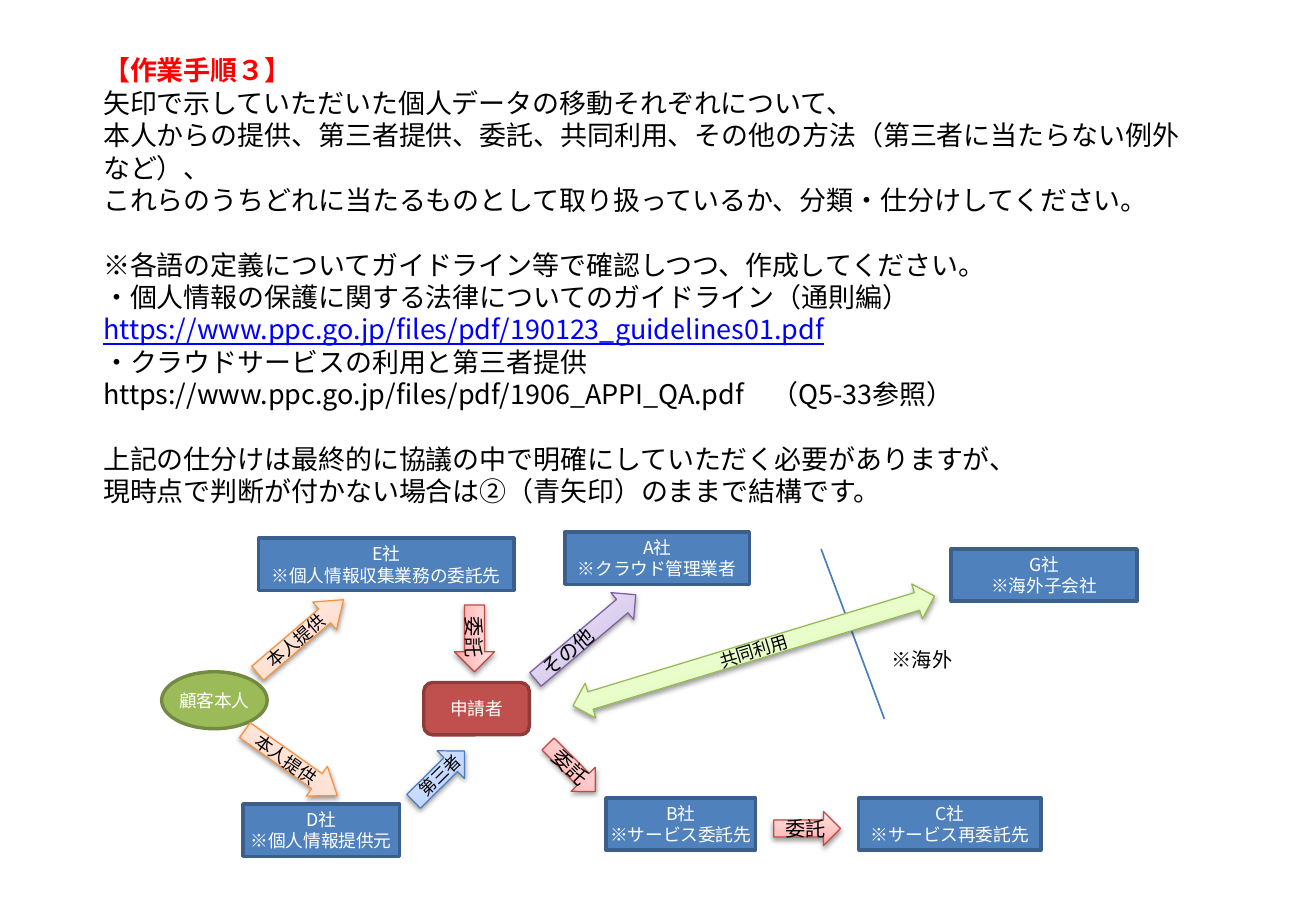
from lxml.etree import SubElement
from pptx import Presentation
from pptx.dml.color import RGBColor
from pptx.enum.shapes import MSO_CONNECTOR as CONN, MSO_SHAPE as SHAPE
from pptx.enum.text import MSO_ANCHOR as ANCHOR, PP_ALIGN as ALIGN
from pptx.oxml.ns import qn
from pptx.util import Pt

FONT = "Noto Sans CJK JP"
LEADING = 1.2
BLACK = RGBColor(0x00, 0x00, 0x00)
WHITE = RGBColor(0xFF, 0xFF, 0xFF)
RED = RGBColor(0xFF, 0x00, 0x00)
LINK_BLUE = RGBColor(0x00, 0x00, 0xFF)
LINE_BLUE = RGBColor(0x4B, 0x7E, 0xBC)
COMPANY = RGBColor(0x4F, 0x81, 0xBD), RGBColor(0x3A, 0x5F, 0x8C)
PERSON = RGBColor(0x9B, 0xBB, 0x59), RGBColor(0x73, 0x8A, 0x42)
APPLICANT = RGBColor(0xC0, 0x50, 0x4D), RGBColor(0x8E, 0x3B, 0x39)

STOPS = (0, 35, 100)
THIRD_PARTY = (RGBColor(0xA4, 0xC4, 0xFF), RGBColor(0xBF, 0xD4, 0xFF),
               RGBColor(0xE6, 0xEE, 0xFF), LINE_BLUE)
ENTRUST = (RGBColor(0xFF, 0xA6, 0xA5), RGBColor(0xFF, 0xC0, 0xBF),
           RGBColor(0xFF, 0xE7, 0xE7), RGBColor(0xBF, 0x4C, 0x48))
OTHER = (RGBColor(0xC9, 0xB5, 0xE8), RGBColor(0xD8, 0xCB, 0xEE),
         RGBColor(0xF0, 0xEA, 0xF9), RGBColor(0x7D, 0x60, 0xA0))
SELF = (RGBColor(0xFF, 0xD2, 0xBD), RGBColor(0xFF, 0xDE, 0xD0),
        RGBColor(0xFF, 0xF2, 0xED), RGBColor(0xF6, 0x92, 0x40))
SHARED = (RGBColor(0xDA, 0xFD, 0xA7), RGBColor(0xE4, 0xFC, 0xC2),
          RGBColor(0xF5, 0xFF, 0xE7), RGBColor(0x98, 0xB9, 0x55))

GUIDE = [
    [("【作業手順３】", RED)],
    [("矢印で示していただいた個人データの移動それぞれについて、", BLACK),
     ("本人からの提供、第三者提供、委託、共同利用、その他の方法（第三者に当たらない例外など）、", BLACK),
     ("これらのうちどれに当たるものとして取り扱っているか、分類・仕分けしてください。", BLACK)],
    [("※各語の定義についてガイドライン等で確認しつつ、作成してください。", BLACK),
     ("・個人情報の保護に関する法律についてのガイドライン（通則編）", BLACK),
     ("https://www.ppc.go.jp/files/pdf/190123_guidelines01.pdf", LINK_BLUE),
     ("・クラウドサービスの利用と第三者提供", BLACK),
     ("https://www.ppc.go.jp/files/pdf/1906_APPI_QA.pdf　（Q5-33参照）", BLACK)],
    [("上記の仕分けは最終的に協議の中で明確にしていただく必要がありますが、", BLACK),
     ("現時点で判断が付かない場合は②（青矢印）のままで結構です。", BLACK)],
]

NODES = [
    (SHAPE.OVAL, PERSON, (0, 83.2, 62.6, 33.8), ["顧客本人"]),
    (SHAPE.ROUNDED_RECTANGLE, APPLICANT, (155.4, 89.6, 62.6, 31), ["申請者"]),
    (SHAPE.RECTANGLE, COMPANY, (263.4, 158, 88.6, 31), ["B社", "※サービス委託先"]),
    (SHAPE.RECTANGLE, COMPANY, (239, 0.4, 109.4, 31), ["A社", "※クラウド管理業者"]),
    (SHAPE.RECTANGLE, COMPANY, (413.2, 158, 108, 31), ["C社", "※サービス再委託先"]),
    (SHAPE.RECTANGLE, COMPANY, (48.2, 161.6, 92.9, 31), ["D社", "※個人情報提供元"]),
    (SHAPE.RECTANGLE, COMPANY, (57.6, 4, 151.2, 31), ["E社", "※個人情報収集業務の委託先"]),
    (SHAPE.RECTANGLE, COMPANY, (468, 10.4, 110.2, 31), ["G社", "※海外子会社"]),
]

FLOWS = [
    ("第三者", 10, THIRD_PARTY, (143.2, 133.6, 42.5, 23), 315.3),
    ("委託", 12, ENTRUST, (165.6, 51.5, 39.6, 23.8), 90),
    ("その他", 12, OTHER, (212.4, 52.2, 77.8, 20.9), 319.8),
    ("委託", 12, ENTRUST, (223.2, 130, 39.6, 20.2), 45.2),
    ("委託", 12, ENTRUST, (362.8, 166, 39.6, 20.2), 0),
    ("本人提供", 10.5, SELF, (43.2, 126.4, 67, 21.6), 35.3),
    ("共同利用", 10.5, SHARED, (239, 60.1, 223.9, 21.6), 343.1),
    ("本人提供", 10.5, SELF, (48.9, 51.5, 67, 21.6), 319.4),
]


def add_line(tf, text, size, color, align=ALIGN.LEFT):
    """Add one paragraph with one run and return both."""
    p = tf.paragraphs[0] if not tf.text else tf.add_paragraph()
    p.alignment = align
    p.line_spacing = Pt(size * LEADING)
    r = p.add_run()
    r.text = text
    r.font.name = FONT
    r.font.size = Pt(size)
    r.font.color.rgb = color
    SubElement(r.font._element, qn("a:ea")).set("typeface", FONT)
    return p, r


def add_text_box(slide, x, y, w, h, wrap):
    """Add a text box without insets and return its text frame."""
    tf = slide.shapes.add_textbox(Pt(x), Pt(y), Pt(w), Pt(h)).text_frame
    tf.margin_left = tf.margin_top = tf.margin_right = tf.margin_bottom = 0
    tf.word_wrap = wrap
    return tf


def add_label_shape(slide, kind, x, y, w, h, line, width):
    """Add an outlined shape whose text is centred vertically."""
    s = slide.shapes.add_shape(kind, Pt(x), Pt(y), Pt(w), Pt(h))
    s.shadow.inherit = False
    s.line.color.rgb = line
    s.line.width = Pt(width)
    s.text_frame.word_wrap = False
    s.text_frame.vertical_anchor = ANCHOR.MIDDLE
    return s


def add_soft_look(s, colors):
    """Give a shape a three-stop gradient and a soft shadow."""
    s.fill.gradient()
    s.fill.gradient_angle = 90
    sp_pr = s._element.spPr
    stops = sp_pr.find(qn("a:gradFill")).find(qn("a:gsLst"))
    for stop in list(stops):
        stops.remove(stop)
    for pos, color in zip(STOPS, colors):
        stop = SubElement(stops, qn("a:gs"), pos=str(pos * 1000))
        SubElement(stop, qn("a:srgbClr"), val=str(color))
    shadow = SubElement(sp_pr.find(qn("a:effectLst")), qn("a:outerShdw"),
                        blurRad=str(Pt(3.1)), dist=str(Pt(1.6)), dir="5400000", rotWithShape="0")
    black = SubElement(shadow, qn("a:srgbClr"), val=str(BLACK))
    SubElement(black, qn("a:alpha"), val="38000")


def add_guide(slide, x, y, w, h):
    """Write the instructions, with a line of space between sections."""
    size = 16
    tf = add_text_box(slide, x, y, w, h, True)
    for i, section in enumerate(GUIDE):
        for j, (text, color) in enumerate(section):
            p, r = add_line(tf, text, size, color)
            r.font.bold = color == RED
            r.font.underline = color == LINK_BLUE
            if i > 1 and j == 0:
                p.space_before = Pt(size * LEADING)


def add_node(slide, x, y, kind, colors, box, lines):
    """Draw one party of the data flow."""
    dx, dy, w, h = box
    fill, line = colors
    s = add_label_shape(slide, kind, x + dx, y + dy, w, h, line, 2)
    s.fill.solid()
    s.fill.fore_color.rgb = fill
    for text in lines:
        add_line(s.text_frame, text, 10.5, WHITE, ALIGN.CENTER)


def add_flow(slide, x, y, text, size, colors, box, angle):
    """Draw one labelled block arrow."""
    dx, dy, w, h = box
    kind = SHAPE.LEFT_RIGHT_ARROW if colors is SHARED else SHAPE.RIGHT_ARROW
    s = add_label_shape(slide, kind, x + dx, y + dy, w, h, colors[-1], 0.75)
    s.rotation = angle
    if colors is SELF:
        s.adjustments[1] = 0.68
    add_soft_look(s, colors)
    align = ALIGN.CENTER if colors in (SELF, SHARED) else ALIGN.LEFT
    add_line(s.text_frame, text, size, BLACK, align)


def add_diagram(slide, x, y):
    """Draw the parties, the border with overseas and the data flows."""
    for node in NODES:
        add_node(slide, x, y, *node)
    border = slide.shapes.add_connector(
        CONN.STRAIGHT, Pt(x + 390.9), Pt(y + 10.4), Pt(x + 428.4), Pt(y + 111.2))
    border.line.color.rgb = LINE_BLUE
    border.line.width = Pt(1)
    SubElement(border._element.spPr, qn("a:effectLst"))
    add_line(add_text_box(slide, x + 432.7, y + 68.8, 36, 14.4, False), "※海外", 12, BLACK)
    for flow in FLOWS:
        add_flow(slide, x, y, *flow)


def main():
    """Build the slide and save it."""
    prs = Presentation()
    prs.slide_width, prs.slide_height = Pt(780), Pt(540)
    slide = prs.slides.add_slide(prs.slide_layouts[6])
    add_guide(slide, 61.2, 32, 643.7, 252)
    add_diagram(slide, 95.8, 315)
    prs.save("out.pptx")


if __name__ == "__main__":
    main()
